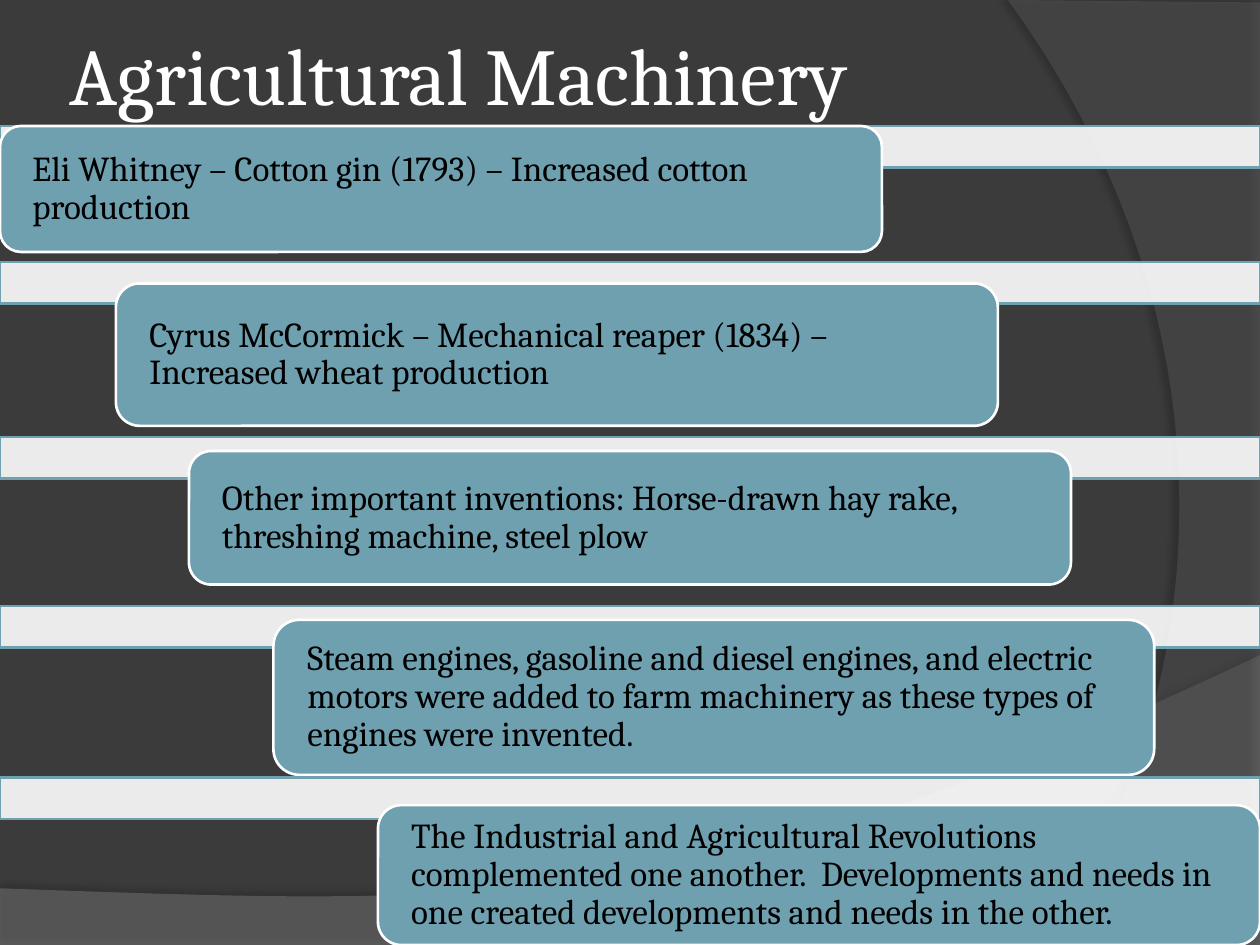
from dataclasses import dataclass

from lxml import etree
from pptx import Presentation
from pptx.dml.color import RGBColor
from pptx.enum.shapes import MSO_SHAPE
from pptx.enum.text import MSO_ANCHOR, PP_ALIGN
from pptx.oxml.ns import qn
from pptx.util import Inches, Pt

RECT = MSO_SHAPE.RECTANGLE
ROUND = MSO_SHAPE.ROUNDED_RECTANGLE
MIDDLE = MSO_ANCHOR.MIDDLE
LEFT = PP_ALIGN.LEFT


@dataclass(frozen=True)
class Theme:
    font: str = "Cambria"
    back: str = "3B3B3B"
    wave: str = "7F7F7F"
    arc: str = "5E5E5E"
    teal: str = "6EA0B0"
    white: str = "FFFFFF"
    black: str = "000000"
    head: float = 46
    body: float = 20
    line: float = 1.5


THEME = Theme()

# Bar top, then box left, top, width, height, and text
STEPS = [
    (1, 0, 1, 7, 1,
     "Eli Whitney – Cotton gin (1793) – Increased cotton production"),
    (2.08, 0.92, 2.25, 7, 1.13,
     "Cyrus McCormick – Mechanical reaper (1834) – Increased wheat production"),
    (3.47, 1.5, 3.58, 7, 1.06,
     "Other important inventions: Horse-drawn hay rake, threshing machine, "
     "steel plow"),
    (4.81, 2.17, 4.92, 6.99, 1.23,
     "Steam engines, gasoline and diesel engines, and electric motors were "
     "added to farm machinery as these types of engines were invented."),
    (6.17, 3, 6.39, 7, 1.11,
     "The Industrial and Agricultural Revolutions complemented one another.  "
     "Developments and needs in one created developments and needs in the "
     "other."),
]


def rgb(code):
    return RGBColor.from_string(code)


def set_alpha(node, share):
    etree.SubElement(node, qn("a:alpha"), val=str(share * 1000))


def paint(shape, fill, line=None, alpha=None):
    shape.shadow.inherit = False
    shape.fill.solid()
    shape.fill.fore_color.rgb = rgb(fill)
    if alpha:
        set_alpha(shape.fill._xPr.find(".//" + qn("a:srgbClr")), alpha)
    if line:
        shape.line.color.rgb = rgb(line)
        shape.line.width = Pt(THEME.line)
    else:
        shape.line.fill.background()


def add_shade(shape, alpha, blur, dist, angle):
    effects = shape._element.spPr.find(qn("a:effectLst"))
    shade = etree.SubElement(
        effects, qn("a:outerShdw"), blurRad=str(Pt(blur)),
        dist=str(Pt(dist)), dir=str(angle * 60000), rotWithShape="0")
    color = etree.SubElement(shade, qn("a:srgbClr"), val=THEME.black)
    set_alpha(color, alpha)


def curve(a, b, c, d, count=40):
    """Points along a cubic curve from a to d."""
    points = []
    for i in range(count + 1):
        t = i / count
        u = 1 - t
        points.append(tuple(
            u**3 * p + 3 * u * u * t * q + 3 * u * t * t * r + t**3 * s
            for p, q, r, s in zip(a, b, c, d)))
    return points


def add_area(slide, points, fill, alpha, shade):
    spots = [(Inches(x), Inches(y)) for x, y in points]
    draft = slide.shapes.build_freeform(*spots[0])
    draft.add_line_segments(spots[1:], close=True)
    shape = draft.convert_to_shape()
    paint(shape, fill, alpha=alpha)
    add_shade(shape, *shade)


def add_block(slide, kind, box, fill, line, alpha=None):
    shape = slide.shapes.add_shape(kind, *map(Inches, box))
    paint(shape, fill, line, alpha)
    return shape


def write(shape, text, size, color, side, edge, lead=None):
    frame = shape.text_frame
    frame.word_wrap = True
    frame.vertical_anchor = MIDDLE
    frame.margin_left = frame.margin_right = Inches(side)
    frame.margin_top = frame.margin_bottom = Inches(edge)
    para = frame.paragraphs[0]
    para.alignment = LEFT
    if lead:
        para.line_spacing = lead
    run = para.add_run()
    run.text = text
    run.font.name = THEME.font
    run.font.size = Pt(size)
    run.font.color.rgb = rgb(color)


def add_step(slide, top, left, y, width, height, text):
    add_block(slide, RECT, (0, top, 10, 0.33), THEME.white, THEME.teal, 90)
    card = add_block(slide, ROUND, (left, y, width, height),
                     THEME.teal, THEME.white)
    # The rounded corners add to the side margin
    write(card, text, THEME.body, THEME.black, 0.21, 0, 0.9)


def main():
    deck = Presentation()
    deck.slide_width, deck.slide_height = Inches(10), Inches(7.5)
    slide = deck.slides.add_slide(deck.slide_layouts[6])

    # Backdrop
    slide.background.fill.solid()
    slide.background.fill.fore_color.rgb = rgb(THEME.back)
    wave = curve((10, 5.2), (5.59, 7.29), (3.91, 7.19), (0, 7.05))
    add_area(slide, wave + [(0, 7.51), (10, 7.51)],
             THEME.wave, 45, (35, 4, 3.5, 270))
    arc = curve((8.21, 7.5), (9.35, 6.19), (10.18, 3), (8, 0))
    add_area(slide, arc + [(10, 0.02), (10, 7.5)],
             THEME.arc, 40, (45, 4, 4, 180))

    # Title
    title = slide.shapes.add_textbox(*map(Inches, (0.5, 0, 8.17, 1.17)))
    write(title, "Agricultural Machinery", THEME.head, THEME.white, 0.05, 0.05)

    # Staircase of steps
    for step in STEPS:
        add_step(slide, *step)

    deck.save("out.pptx")


if __name__ == "__main__":
    main()
